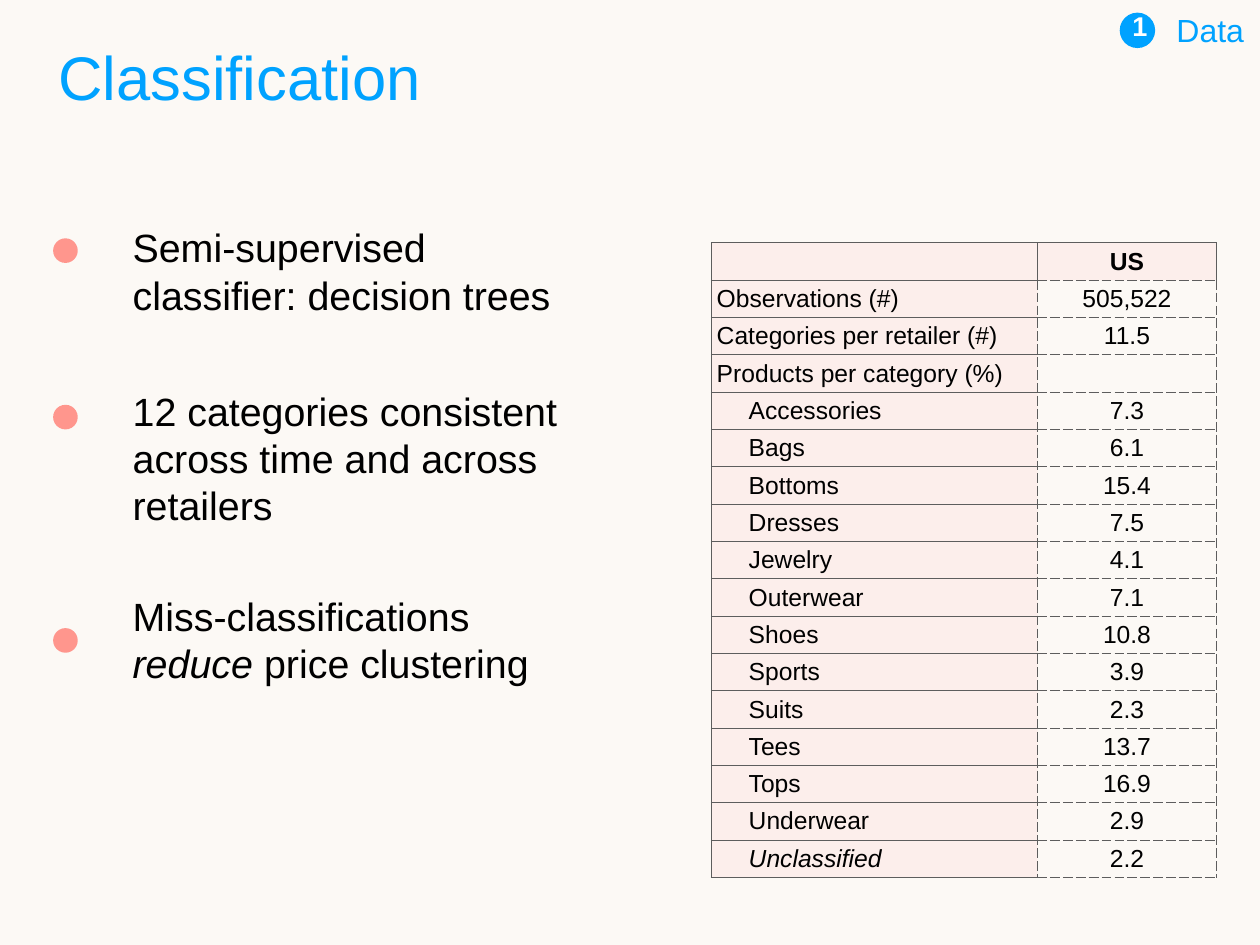
from lxml import etree
from pptx import Presentation
from pptx.dml.color import RGBColor
from pptx.enum.shapes import MSO_SHAPE
from pptx.enum.text import MSO_ANCHOR, PP_ALIGN
from pptx.oxml.ns import qn
from pptx.util import Pt

OVAL = MSO_SHAPE.OVAL
MIDDLE = MSO_ANCHOR.MIDDLE
LEFT, CENTER = PP_ALIGN.LEFT, PP_ALIGN.CENTER

FONT = "Arial"
COLORS = {
    "background": "FCF9F5",
    "accent": "00A2FF",
    "bullet": "FF968D",
    "label": "FFD6D3",
    "border": "5D5D5D",
    "text": "000000",
    "badge": "FFFFFF",
}

TITLE = "Classification"
SECTION_NUMBER, SECTION = "1", "Data"
POINTS = [
    (170, 100, 193.7, [("Semi-supervised classifier: decision trees", False)]),
    (301.7, 140.4, 329, [("12 categories consistent across time and across retailers", False)]),
    (449.3, 140.4, 510.5, [("Miss-classifications ", False), ("reduce", True), (" price clustering", False)]),
]
SUMMARY = [
    ("", "US"),
    ("Observations (#)", "505,522"),
    ("Categories per retailer (#)", "11.5"),
    ("Products per category (%)", ""),
]
CATEGORIES = [
    ("Accessories", "7.3"),
    ("Bags", "6.1"),
    ("Bottoms", "15.4"),
    ("Dresses", "7.5"),
    ("Jewelry", "4.1"),
    ("Outerwear", "7.1"),
    ("Shoes", "10.8"),
    ("Sports", "3.9"),
    ("Suits", "2.3"),
    ("Tees", "13.7"),
    ("Tops", "16.9"),
    ("Underwear", "2.9"),
    ("Unclassified", "2.2"),
]
COLUMN_WIDTHS = (265, 145.4)
ROW_HEIGHT = 30.35
INSET = 4.3
CATEGORY_INDENT = 26


def rgb(name):
    return RGBColor.from_string(COLORS[name])


def style_font(p, size, color, bold=False):
    p.font.name = FONT
    p.font.size = Pt(size)
    p.font.bold = bold
    p.font.color.rgb = rgb(color)


def add_text(slide, box, runs, size, color, align=LEFT, bold=False, wrap=True):
    tf = slide.shapes.add_textbox(*map(Pt, box)).text_frame
    tf.word_wrap = wrap
    tf.vertical_anchor = MIDDLE
    tf.margin_left = tf.margin_right = tf.margin_top = tf.margin_bottom = Pt(INSET)
    p = tf.paragraphs[0]
    p.alignment = align
    style_font(p, size, color, bold)
    for text, italic in runs:
        r = p.add_run()
        r.text = text
        if italic:
            r.font.italic = True


def add_dot(slide, left, top, size, color):
    sp = slide.shapes.add_shape(OVAL, Pt(left), Pt(top), Pt(size), Pt(size))
    sp.shadow.inherit = False
    sp.fill.solid()
    sp.fill.fore_color.rgb = rgb(color)
    sp.line.fill.background()


def add_border(cell, side, dash):
    ln = etree.SubElement(cell._tc.get_or_add_tcPr(), qn(f"a:ln{side}"), w=str(Pt(1)))
    fill = etree.SubElement(ln, qn("a:solidFill"))
    etree.SubElement(fill, qn("a:srgbClr"), val=COLORS["border"])
    etree.SubElement(ln, qn("a:prstDash"), val=dash)


def fill_label(cell):
    cell.fill.solid()
    cell.fill.fore_color.rgb = rgb("label")
    color = cell._tc.tcPr.find(".//" + qn("a:srgbClr") + f"[@val='{COLORS['label']}']")
    etree.SubElement(color, qn("a:alpha"), val="29000")


def add_category_table(slide):
    rows = SUMMARY + CATEGORIES
    frame = slide.shapes.add_table(len(rows), 2, Pt(578.2), Pt(197.4),
                                   Pt(sum(COLUMN_WIDTHS)), Pt(ROW_HEIGHT * len(rows)))
    table = frame.table
    table.first_row = table.horz_banding = False
    for column, width in zip(table.columns, COLUMN_WIDTHS):
        column.width = Pt(width)
    for i, values in enumerate(rows):
        table.rows[i].height = Pt(ROW_HEIGHT)
        for j, value in enumerate(values):
            cell = table.cell(i, j)
            is_category = j == 0 and i >= len(SUMMARY)
            cell.vertical_anchor = MIDDLE
            cell.margin_left = Pt(INSET + CATEGORY_INDENT * is_category)
            cell.margin_right = Pt(INSET)
            cell.margin_top = cell.margin_bottom = Pt(3)
            for side in "LRTB":
                dashed = (j == 1 and (i > 0 or side == "B")) or (i > 0 and side == "R")
                add_border(cell, side, "dash" if dashed else "solid")
            if i == 0 or j == 0:
                fill_label(cell)
            else:
                cell.fill.background()
            p = cell.text_frame.paragraphs[0]
            p.alignment = CENTER if j else LEFT
            style_font(p, 20, "text", bold=i == 0)
            p.font.italic = value == "Unclassified"
            if value:
                p.add_run().text = value


def main():
    prs = Presentation()
    prs.slide_width, prs.slide_height = Pt(1024), Pt(768)
    slide = prs.slides.add_slide(prs.slide_layouts[6])
    slide.background.fill.solid()
    slide.background.fill.fore_color.rgb = rgb("background")

    add_text(slide, (43.2, 0, 874, 124), [(TITLE, False)], 50, "accent")
    for top, height, dot_top, runs in POINTS:
        add_dot(slide, 43.2, dot_top, 20, "bullet")
        add_text(slide, (103.5, top, 357, height), runs, 32, "text")
    add_category_table(slide)
    add_dot(slide, 910, 10.3, 28.8, "accent")
    add_text(slide, (916, 6.5, 16.6, 29.5), [(SECTION_NUMBER, False)], 22, "badge", CENTER, True, False)
    add_text(slide, (951.8, 0, 72, 48), [(SECTION, False)], 26, "accent", wrap=False)
    prs.save("out.pptx")


if __name__ == "__main__":
    main()
